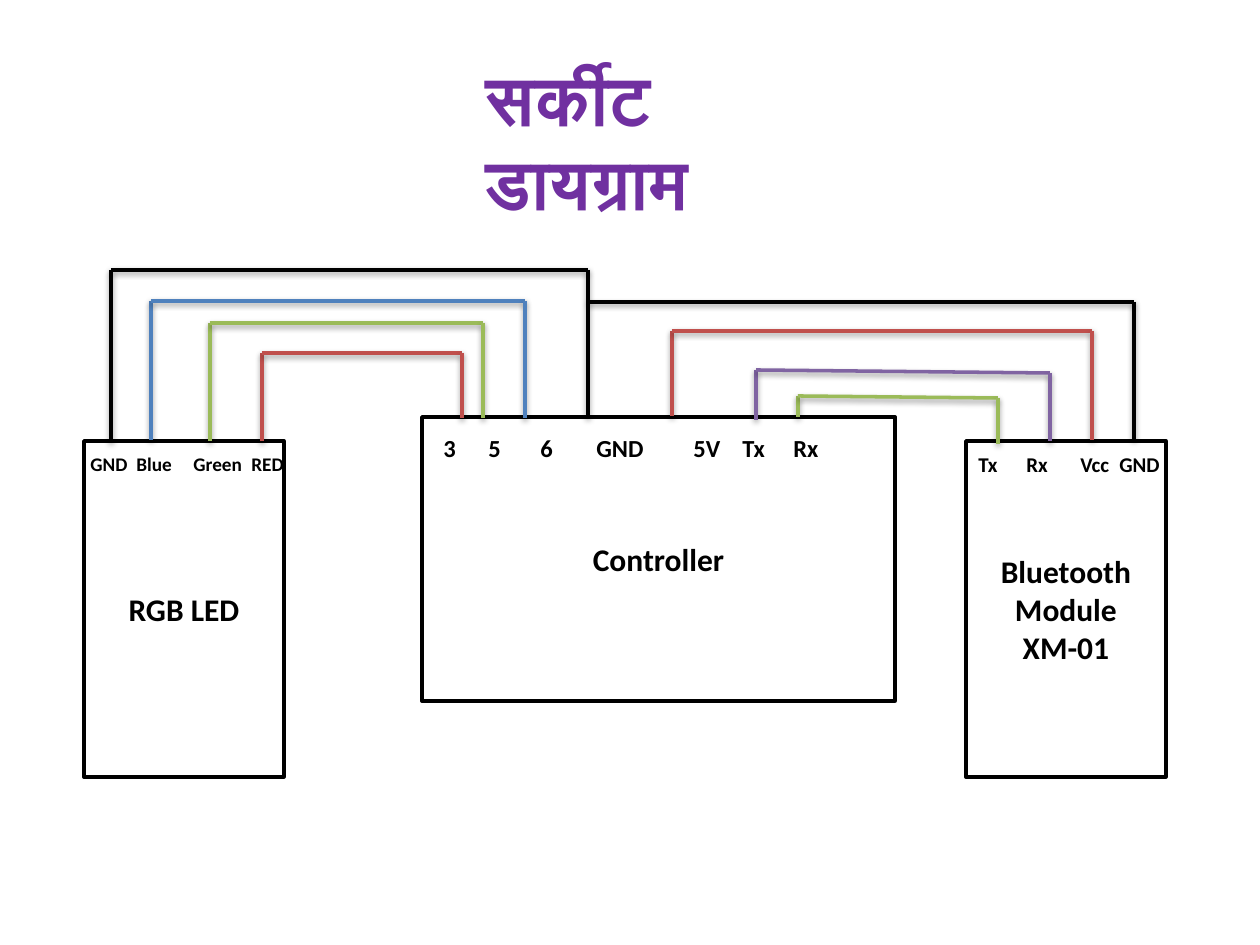
from itertools import pairwise

from lxml.etree import SubElement
from pptx import Presentation
from pptx.dml.color import RGBColor
from pptx.enum.shapes import MSO_CONNECTOR as Connector, MSO_SHAPE as Shape
from pptx.enum.text import MSO_ANCHOR as Anchor, MSO_AUTO_SIZE as AutoSize, PP_ALIGN as Align
from pptx.oxml import parse_xml
from pptx.oxml.ns import nsdecls, qn
from pptx.util import Pt

THEME = {
    "font": "Calibri",
    "black": "000000", "white": "FFFFFF", "blue": "4F81BD", "green": "9BBB59",
    "red": "C0504D", "purple": "8064A2", "title": "7030A0",
    "title_size": 40, "name_size": 18, "line_width": 2,
}

TITLE = ("सर्कीट डायग्राम", (473, 49, 338, 97))
MODULES = [
    (["Controller"], (422, 417, 473, 284)),
    (["RGB LED"], (84, 441, 200, 336)),
    (["Bluetooth Module", "XM-01"], (966, 441, 200, 336)),
]
PIN_ROWS = [
    (11, (78, 446, 221, 37), [("GND", 90), ("Blue", 136), ("Green", 193), ("RED", 251)]),
    (12, (966, 445, 218, 38), [("Tx", 978), ("Rx", 1026), ("Vcc", 1080), ("GND", 1119)]),
    (14, (431, 427, 438, 43), [("3", 443), ("5", 488), ("6", 540), ("GND", 596),
                               ("5V", 693), ("Tx", 742), ("Rx", 793)]),
]
WIRES = [
    ("black", [(111, 441), (111, 270), (588, 270), (588, 417)]),
    ("blue", [(151, 440), (151, 301), (525, 301), (525, 418)]),
    ("green", [(210, 441), (210, 323), (483, 323), (483, 418)]),
    ("red", [(262, 441), (262, 353), (462, 353), (462, 418)]),
    ("black", [(588, 302), (1134, 302), (1134, 440)]),
    ("red", [(672, 416), (672, 331), (1092, 331), (1092, 440)]),
    ("purple", [(756, 420), (756, 370), (1050, 373), (1050, 441)]),
    ("green", [(798, 417), (798, 396), (998, 398), (998, 444)]),
]
SHADOW = (
    f'<a:effectLst {nsdecls("a")}><a:outerShdw blurRad="40000" dist="20000" dir="5400000" '
    'rotWithShape="0"><a:srgbClr val="000000"><a:alpha val="38000"/></a:srgbClr>'
    '</a:outerShdw></a:effectLst>'
)


def px(value):
    return round(value * 914400 / 126)


def color(name):
    return RGBColor.from_string(THEME[name])


def apply(target, formats):
    for name, value in formats.items():
        setattr(target, name, value)


def write(paragraph, text, size, ink="black", align=Align.LEFT):
    paragraph.alignment = align
    run = paragraph.add_run()
    run.text = text
    apply(run.font, {"name": THEME["font"], "size": Pt(size), "bold": True})
    run.font.color.rgb = color(ink)


def add_title(slide, text, box):
    title = slide.shapes.title
    apply(title, dict(zip(("left", "top", "width", "height"), map(px, box))))
    apply(title.text_frame, {"word_wrap": True, "auto_size": AutoSize.NONE,
                             "vertical_anchor": Anchor.TOP})
    write(title.text_frame.paragraphs[0], text, THEME["title_size"], "title")


def add_module(slide, lines, box):
    module = slide.shapes.add_shape(Shape.RECTANGLE, *map(px, box))
    module.shadow.inherit = False
    module.fill.solid()
    module.fill.fore_color.rgb = color("white")
    module.line.color.rgb = color("black")
    module.line.width = Pt(THEME["line_width"])
    frame = module.text_frame
    apply(frame, {"word_wrap": True, "vertical_anchor": Anchor.MIDDLE})
    for index, line in enumerate(lines):
        paragraph = frame.add_paragraph() if index else frame.paragraphs[0]
        write(paragraph, line, THEME["name_size"], align=Align.CENTER)


def add_wire(slide, ink, points):
    for start, end in pairwise(points):
        wire = slide.shapes.add_connector(Connector.STRAIGHT, *map(px, start + end))
        wire.line.color.rgb = color(ink)
        wire.line.width = Pt(THEME["line_width"])
        wire._element.spPr.append(parse_xml(SHADOW))


def add_pin_row(slide, size, box, pins):
    frame = slide.shapes.add_textbox(*map(px, box)).text_frame
    frame.word_wrap = False
    paragraph = frame.paragraphs[0]
    write(paragraph, "\t".join(label for label, _ in pins), size)
    tabs = SubElement(paragraph._p.get_or_add_pPr(), qn("a:tabLst"))
    first = pins[0][1]
    for _, left in pins[1:]:
        SubElement(tabs, qn("a:tab"), pos=str(px(left - first)), algn="l")


def main():
    presentation = Presentation()
    apply(presentation, {"slide_width": px(1260), "slide_height": px(945)})
    slide = presentation.slides.add_slide(presentation.slide_layouts[5])
    add_title(slide, *TITLE)
    for add, items in ((add_module, MODULES), (add_wire, WIRES), (add_pin_row, PIN_ROWS)):
        for item in items:
            add(slide, *item)
    presentation.save("out.pptx")


if __name__ == "__main__":
    main()
